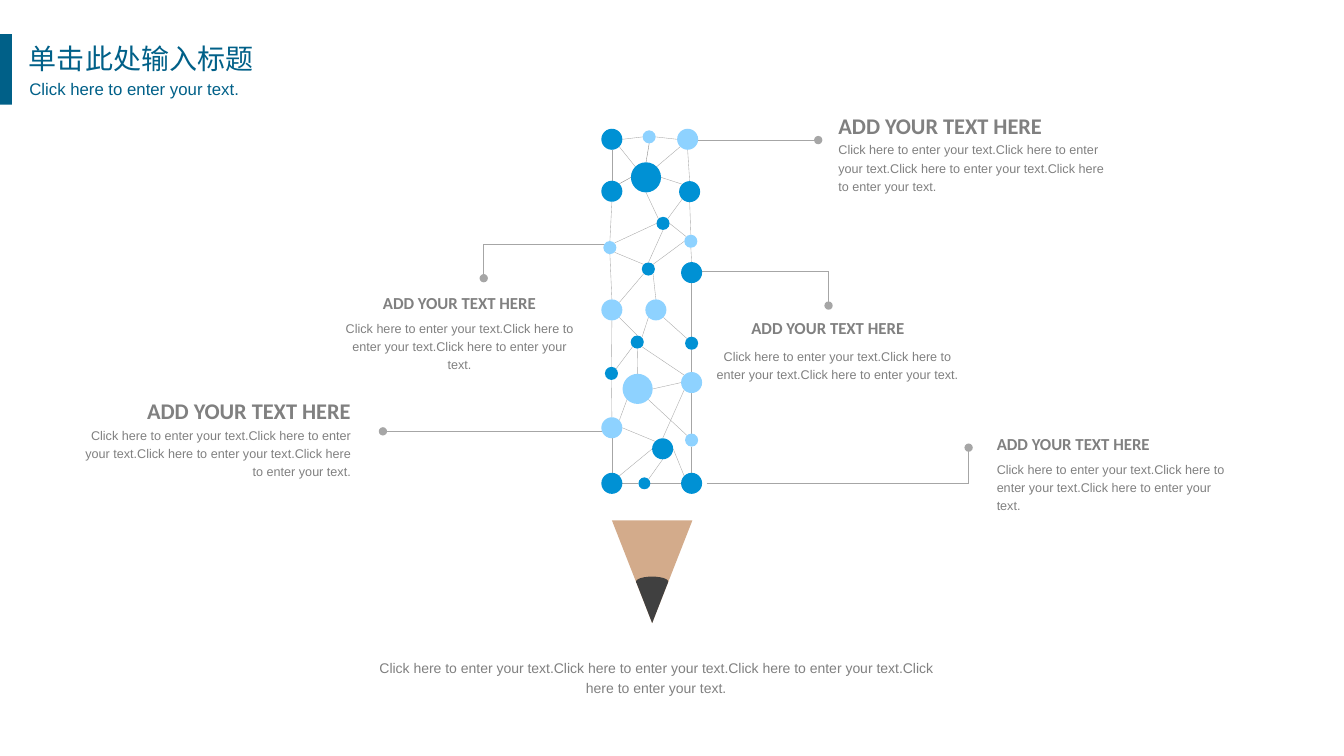
"""Build a slide with a pencil made of linked dots and five labelled callouts."""
from dataclasses import dataclass
from itertools import pairwise

from lxml import etree
from pptx import Presentation
from pptx.dml.color import RGBColor
from pptx.enum.shapes import MSO_CONNECTOR, MSO_SHAPE
from pptx.enum.text import MSO_ANCHOR, MSO_AUTO_SIZE, PP_ALIGN
from pptx.oxml.ns import qn
from pptx.util import Cm, Pt

OVAL, CONE, RECT = MSO_SHAPE.OVAL, MSO_SHAPE.ISOSCELES_TRIANGLE, MSO_SHAPE.RECTANGLE
LINE = MSO_CONNECTOR.STRAIGHT
LEFT, MID, RIGHT, EVEN = PP_ALIGN.LEFT, PP_ALIGN.CENTER, PP_ALIGN.RIGHT, PP_ALIGN.JUSTIFY
TOP, GROW = MSO_ANCHOR.TOP, MSO_AUTO_SIZE.SHAPE_TO_FIT_TEXT


@dataclass(frozen=True)
class Theme:
    navy: str = "006088"
    blue: str = "0091D4"
    pale: str = "8ED2FF"
    wood: str = "D3AB8B"
    lead: str = "404040"
    text: str = "808080"
    wire: str = "A6A6A6"
    title: int = 20
    large: int = 16
    small: int = 12
    note: int = 10
    body: int = 9
    sans: str = "Arial"
    head: str = "Calibri"
    asian: str = "Noto Sans CJK SC"


look = Theme()
deck = Presentation()
deck.slide_width, deck.slide_height = Cm(33.87), Cm(19.05)
slide = deck.slides.add_slide(deck.slide_layouts[5])
shapes = slide.shapes


def draw(kind, box, color, turn=0):
    shape = shapes.add_shape(kind, *map(Cm, box))
    shape.shadow.inherit = False
    shape.fill.solid()
    shape.fill.fore_color.rgb = RGBColor.from_string(color)
    shape.line.fill.background()
    shape.rotation = turn


def write(text, box, size, face, align, color=look.text, bold=False, prose=False, pad=0.25, shape=None):
    shape = shape or shapes.add_textbox(0, 0, 0, 0)
    shape.left, shape.top, shape.width, shape.height = map(Cm, box)
    frame = shape.text_frame
    frame.word_wrap, frame.auto_size, frame.vertical_anchor = True, GROW, TOP
    frame.margin_left = frame.margin_right = Cm(pad)
    frame.margin_top = frame.margin_bottom = Cm(min(pad, 0.13))
    frame.text = text
    para = frame.paragraphs[0]
    para.alignment = align
    para.line_spacing = 1.2 if prose else 1.0
    para.space_before = Pt(size * 0.2 if prose else 0)
    font = para.font
    font.name, font.size, font.bold = face, Pt(size), bold
    font.color.rgb = RGBColor.from_string(color)
    return para


title = write("单击此处输入标题", (0.48, 0.91, 6.58, 1.17), look.title, look.asian, LEFT,
              look.navy, shape=shapes.title)
props = title.runs[0].font
props.name = look.asian
etree.SubElement(title.runs[0]._r.rPr, qn("a:ea"), typeface=look.asian)

dots = {
    "a1": (15.42, 3.51, 0.53, look.blue),
    "a2": (15.42, 4.82, 0.53, look.blue),
    "a3": (15.37, 6.24, 0.33, look.pale),
    "a4": (15.42, 7.81, 0.53, look.pale),
    "a5": (15.41, 9.41, 0.33, look.blue),
    "a6": (15.42, 10.78, 0.53, look.pale),
    "a7": (15.42, 12.18, 0.53, look.blue),
    "m1": (16.36, 3.45, 0.33, look.pale),
    "m2": (16.28, 4.47, 0.76, look.blue),
    "m3": (16.71, 5.63, 0.33, look.blue),
    "m4": (16.34, 6.78, 0.33, look.blue),
    "m5": (16.53, 7.81, 0.53, look.pale),
    "m6": (16.06, 8.62, 0.33, look.blue),
    "m7": (16.07, 9.8, 0.76, look.pale),
    "m8": (16.7, 11.31, 0.53, look.blue),
    "m9": (16.24, 12.18, 0.3, look.blue),
    "r1": (17.33, 3.51, 0.53, look.pale),
    "r2": (17.38, 4.83, 0.53, look.blue),
    "r3": (17.41, 6.08, 0.33, look.pale),
    "r4": (17.43, 6.87, 0.53, look.blue),
    "r5": (17.43, 8.65, 0.33, look.blue),
    "r6": (17.43, 9.64, 0.53, look.pale),
    "r7": (17.43, 11.09, 0.33, look.pale),
    "r8": (17.43, 12.18, 0.53, look.blue),
}
sites = {"n": (0, -1), "s": (0, 1), "w": (-1, 0), "e": (1, 0),
         "nw": (-0.71, -0.71), "ne": (0.71, -0.71), "sw": (-0.71, 0.71), "se": (0.71, 0.71)}
links = [
    "a7 e m9 w", "m9 e r8 w", "r1 w m1 e", "m1 w a1 e", "a7 ne m8 w", "m8 e r8 nw",
    "m8 s m9 ne", "m8 nw a6 e", "a6 ne m7 sw", "m7 e r6 w", "r7 nw m7 se", "m8 n r6 sw",
    "r6 nw m6 se", "a5 ne m6 sw", "m6 ne m5 sw", "r5 nw m5 se", "m7 n m6 s", "m6 n a4 se",
    "a4 ne m4 sw", "m4 nw a3 se", "a3 ne m3 w", "m4 n m3 s", "m5 n m4 se", "m4 ne r3 w",
    "r3 nw m3 e", "m3 ne r2 sw", "m3 nw m2 s", "m2 nw a1 se", "m2 ne r1 sw", "m2 e r2 nw",
]
dark = ["a2 ne m2 w", "m2 n m1 s"]
for side in "ar":
    column = [name for name in dots if name[0] == side]
    links += [f"{high} s {low} n" for high, low in pairwise(column)]

leaders = [
    [(17.45, 3.53), (20.62, 3.53)],
    [(17.7, 6.83), (20.88, 6.83), (20.88, 7.7)],
    [(17.81, 12.17), (24.41, 12.17), (24.41, 11.28)],
    [(15.24, 10.87), (9.65, 10.87)],
    [(15.37, 6.15), (12.19, 6.15), (12.19, 7.01)],
]
wires = []
for path in leaders:
    for start, end in pairwise(path):
        width = 0.5 if start[0] == end[0] else 0.25
        wires.append((start, end, look.wire, width, end == path[-1]))
for link in links + dark:
    one, out, two, into = link.split()
    ends = []
    for name, site in ((one, out), (two, into)):
        x, y, size, _ = dots[name]
        dx, dy = sites[site]
        ends.append((x + dx * size / 2, y + dy * size / 2))
    wires.append((*ends, look.text if link in dark else look.wire, 0.25, False))

for start, end, color, width, tip in wires:
    wire = shapes.add_connector(LINE, *map(Cm, start + end))
    wire.line.color.rgb = RGBColor.from_string(color)
    wire.line.width = Pt(width)
    props = wire._element.spPr
    if tip:
        etree.SubElement(props.find(qn("a:ln")), qn("a:tailEnd"), type="oval")
    etree.SubElement(props, qn("a:effectLst"))

for x, y, size, color in dots.values():
    draw(OVAL, (x - size / 2, y - size / 2, size, size), color)
draw(CONE, (15.42, 13.11, 2.03, 2.59), look.wood, 180)
draw(CONE, (16.03, 14.66, 0.81, 1.04), look.lead, 180)
draw(OVAL, (16.03, 14.53, 0.81, 0.25), look.lead)
draw(RECT, (0, 0.86, 0.3, 1.78), look.navy)

phrase = "Click here to enter your text."
notes = [
    (LEFT, look.large, (20.88, 2.69, 8, 0.94), 4, (20.88, 3.38, 7.52, 1.63)),
    (MID, look.small, (17.98, 7.87, 5.77, 0.76), 3, (17.78, 8.59, 6.65, 1.17)),
    (LEFT, look.small, (24.87, 10.8, 5.18, 0.76), 3, (24.87, 11.43, 6.3, 1.63)),
    (MID, look.small, (8.99, 7.24, 5.18, 0.76), 3, (8.43, 7.87, 6.3, 1.63)),
    (RIGHT, look.large, (1.09, 9.88, 8, 0.94), 4, (1.57, 10.57, 7.52, 1.63)),
]
for align, size, top, count, box in notes:
    write(phrase * count, box, look.body, look.sans, align, prose=True)
    write("ADD YOUR TEXT HERE", top, size, look.head, align, bold=True)
write(phrase * 4, (9.4, 16.43, 14.27, 1.22), look.note, look.sans, MID, prose=True, pad=0.1)
write(phrase, (0.64, 1.78, 6.27, 0.81), look.small, look.sans, EVEN, look.navy, prose=True, pad=0.1)

deck.save("out.pptx")
